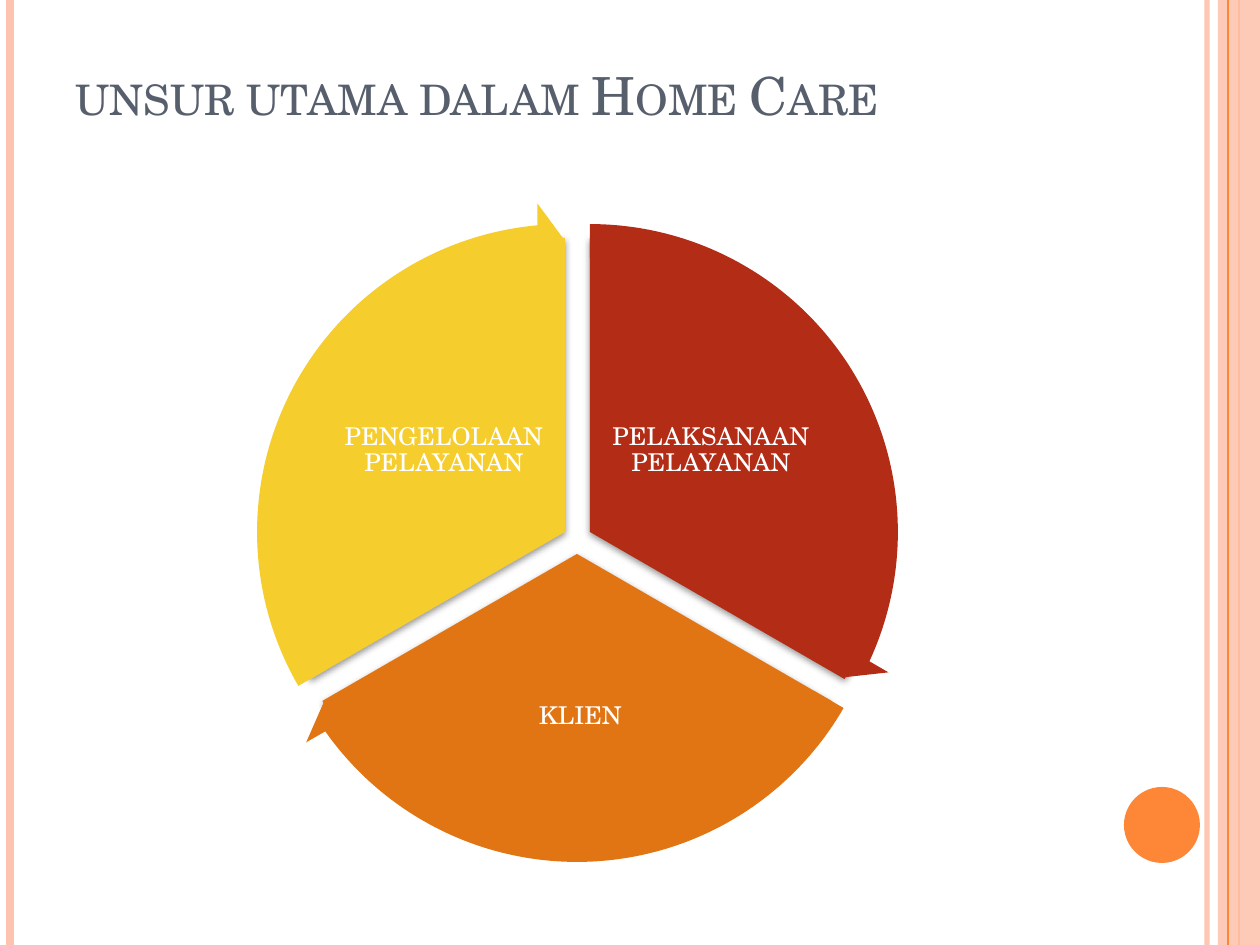
"""Builds the slide on the three main elements of home care."""
from lxml import etree
from pptx import Presentation
from pptx import util as u
from pptx.dml.color import RGBColor
from pptx.enum import shapes, text
from pptx.oxml import ns

PX = 914400 / 126
FONT = "TeX Gyre Schola"
WHITE = RGBColor(0xFF, 0xFF, 0xFF)
SLATE = RGBColor(0x57, 0x5F, 0x6D)
PEACH = RGBColor(0xFE, 0xC3, 0xAE)
ORANGE = RGBColor(0xFE, 0x86, 0x37)
RED = RGBColor(0xB3, 0x2C, 0x16)
AMBER = RGBColor(0xE2, 0x75, 0x13)
YELLOW = RGBColor(0xF5, 0xCD, 0x2D)

deck = Presentation()
deck.slide_width, deck.slide_height = round(1260 * PX), round(945 * PX)
page = deck.slides.add_slide(deck.slide_layouts[6])


def add_solid(kind, bounds, color, adjustments=()):
    shape = page.shapes.add_shape(kind, *[round(n * PX) for n in bounds])
    shape.shadow.inherit = False
    shape.fill.solid()
    shape.fill.fore_color.rgb = color
    shape.line.fill.background()
    for index, value in enumerate(adjustments):
        shape.adjustments[index] = value
    return shape


def add_text(bounds, words, frame_format, para_format, font_format):
    box = page.shapes.add_textbox(*[round(n * PX) for n in bounds])
    for name, value in frame_format.items():
        setattr(box.text_frame, name, value)
    para = box.text_frame.paragraphs[0]
    for name, value in para_format.items():
        setattr(para, name, value)
    span = para.add_run()
    span.text = words
    color = font_format["color"]
    span.font.name, span.font.size = FONT, font_format["size"]
    span.font.color.rgb = color
    return span


for x, width, color, opacity in [
    (1207, 3, PEACH, 93),
    (10, 4.5, PEACH, 100),
    (1239, 1.5, ORANGE, 100),
    (1218, 0, PEACH, 87),
    (1228, 0.75, ORANGE, 100),
]:
    if width:
        stripe = page.shapes.add_connector(
            shapes.MSO_CONNECTOR.STRAIGHT, round(x * PX), 0, round(x * PX), deck.slide_height
        )
        stripe.line.width = u.Pt(width)
        stripe.line.color.rgb = color
        etree.SubElement(stripe._element.spPr, ns.qn("a:effectLst"))
    else:
        stripe = add_solid(shapes.MSO_SHAPE.RECTANGLE, (x, 0, 42, 945), color)
    if opacity < 100:
        tint = next(stripe._element.spPr.iter(ns.qn("a:srgbClr")))
        etree.SubElement(tint, ns.qn("a:alpha"), val=str(opacity * 1000))
add_solid(shapes.MSO_SHAPE.OVAL, (1124, 787, 76, 76), ORANGE)

title = add_text(
    (63, 38, 1029, 157),
    "unsur utama dalam Home Care",
    {"word_wrap": True, "vertical_anchor": text.MSO_ANCHOR.BOTTOM, "margin_bottom": round(69 * PX)},
    {"alignment": text.PP_ALIGN.LEFT},
    {"size": u.Pt(30), "color": SLATE},
)
title.font._element.set("cap", "small")

label_frame = {"word_wrap": True, "vertical_anchor": text.MSO_ANCHOR.MIDDLE}
for side in ("left", "right", "top", "bottom"):
    label_frame[f"margin_{side}"] = round(2 * PX)
label_para = {"alignment": text.PP_ALIGN.CENTER, "line_spacing": 0.9, "space_after": u.Pt(5)}
label_font = {"size": u.Pt(14), "color": WHITE}

PIE, RING = 588, 660
slices = [
    ("PELAKSANAAN PELAYANAN", RED, (590, 532), (162, 18), (606, 363, 210, 175), (14.725, 161.994)),
    ("KLIEN", AMBER, (577, 554), (18, 90), (423, 640, 315, 154), (86.72, 18.005)),
    ("PENGELOLAAN PELAYANAN", YELLOW, (565, 532), (90, 162), (339, 363, 210, 175), (158.73, 90)),
]
for words, color, (x, y), angles, label_bounds, sweep in slices:
    bounds = (x - PIE // 2, y - PIE // 2, PIE, PIE)
    wedge = add_solid(shapes.MSO_SHAPE.PIE, bounds, color, angles)
    effects = wedge._element.spPr.find(ns.qn("a:effectLst"))
    shadow = etree.SubElement(
        effects, ns.qn("a:outerShdw"),
        blurRad=str(u.Pt(4)), dist=str(u.Pt(1.6)), dir="5400000", rotWithShape="0",
    )
    shade = etree.SubElement(shadow, ns.qn("a:srgbClr"), val="000000")
    etree.SubElement(shade, ns.qn("a:alpha"), val="42000")
    add_text(label_bounds, words, label_frame, label_para, label_font)

for words, color, (x, y), angles, label_bounds, sweep in slices:
    bounds = (x - RING // 2, y - RING // 2, RING, RING)
    add_solid(shapes.MSO_SHAPE.CIRCULAR_ARROW, bounds, color, (0.051, 3.275, *sweep, 0.059))

deck.save("out.pptx")
